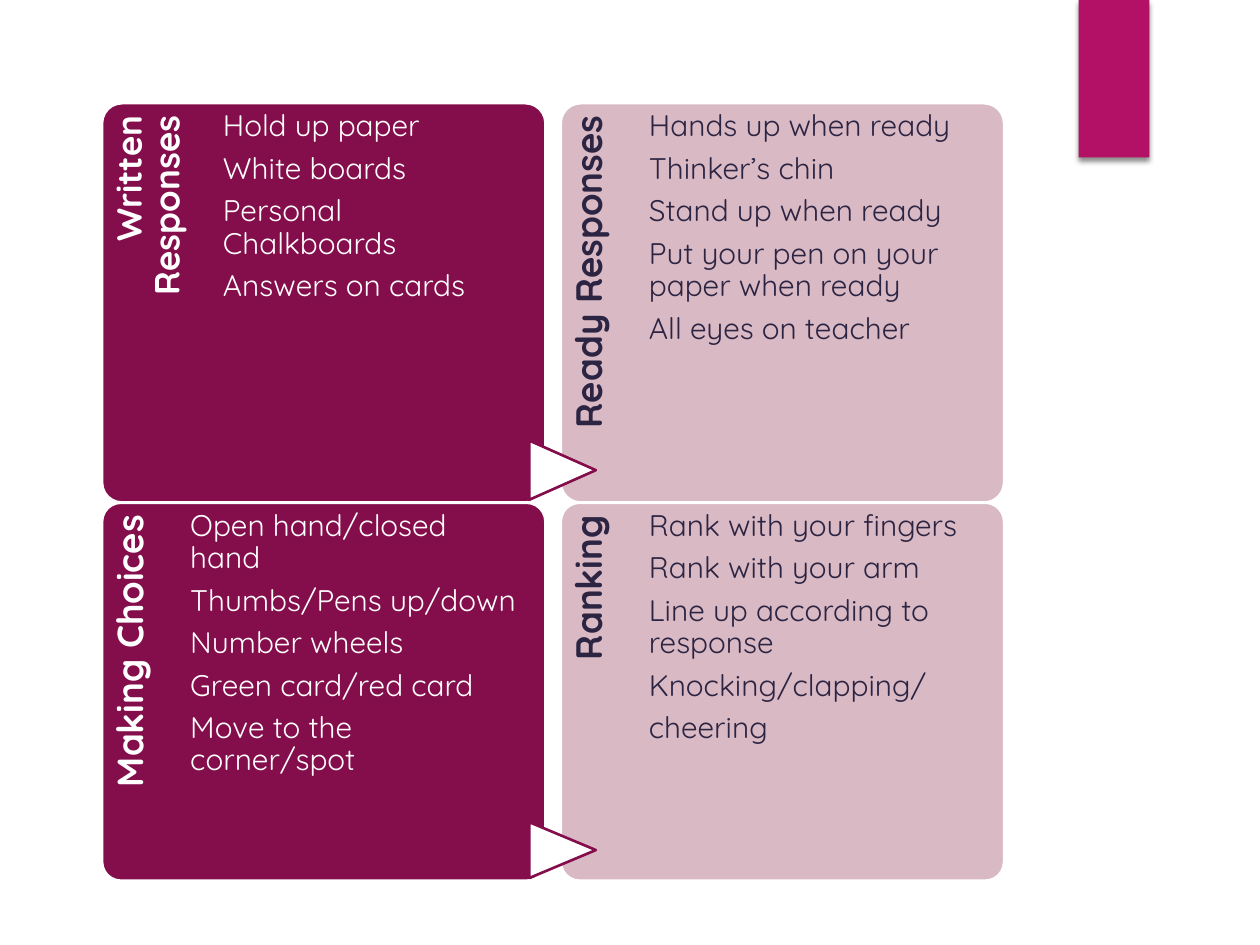
from lxml import etree
from pptx import Presentation
from pptx.dml.color import RGBColor
from pptx.enum.shapes import MSO_SHAPE as Shape
from pptx.enum.text import MSO_ANCHOR as Anchor, PP_ALIGN as Align
from pptx.oxml import parse_xml
from pptx.oxml.ns import nsdecls, qn
from pptx.util import Pt

PLUM, ROSE, NAVY, WHITE, MAGENTA = "840D4B", "D9B9C3", "2C2443", "FFFFFF", "B31166"
CARD_LEFT, CARD_WIDTH, CARD_STEP = 58.3, 253.4, 262.1
TITLE_WIDTH, BODY_WIDTH = 50.4, 188.6
ARROW_LENGTH, ARROW_LEFT = 38, 302.5

# Each row: top, height, arrow height, then (title, title size, indent, items) per card
ROWS = [
    (59, 228.2, 33.8, [
        ("Written Responses", 20, 18.7,
         ["Hold up paper", "White boards", "Personal Chalkboards", "Answers on cards"]),
        ("Ready Responses", 21, 0,
         ["Hands up when ready", "Thinker’s chin", "Stand up when ready",
          "Put your pen on your paper when ready", "All eyes on teacher"]),
    ]),
    (287.3, 216, 31.9, [
        ("Making Choices", 21, 0,
         ["Open hand/closed hand", "Thumbs/Pens up/down", "Number wheels",
          "Green card/red card", "Move to the corner/spot"]),
        ("Ranking", 21, 0,
         ["Rank with your fingers", "Rank with your arm", "Line up according to response",
          "Knocking/clapping/", "cheering"]),
    ]),
]


def rgb(value):
    return RGBColor.from_string(value)


def turned(left, top, width, height):
    """Box which, after a quarter turn, covers the given one."""
    shift = (width - height) / 2
    return left + shift, top - shift, height, width


def add_panel(slide, preset, box, fill, line=None):
    panel = slide.shapes.add_shape(preset, *map(Pt, box))
    panel.shadow.inherit = False
    panel.fill.solid()
    panel.fill.fore_color.rgb = rgb(fill)
    if line:
        panel.line.color.rgb = rgb(line)
        panel.line.width = Pt(1.5)
    else:
        panel.line.fill.background()
    return panel


def add_text(slide, box, lines, size, color, bold=False, align=Align.LEFT,
             indent=0, top_inset=4.5, right_inset=0, rotation=0):
    holder = slide.shapes.add_textbox(*map(Pt, box))
    holder.rotation = rotation
    frame = holder.text_frame
    frame.word_wrap = True
    frame.vertical_anchor = Anchor.TOP
    frame.margin_left = frame.margin_bottom = 0
    frame.margin_top, frame.margin_right = Pt(top_inset), Pt(right_inset)
    for index, line in enumerate(lines):
        para = frame.paragraphs[0] if index == 0 else frame.add_paragraph()
        if indent:
            props = para._p.get_or_add_pPr()
            props.set("marL", str(Pt(indent)))
            props.set("indent", "0")
        para.alignment = align
        para.line_spacing = 0.9
        para.space_after = Pt(size * 0.35)
        run = para.add_run()
        run.text = line
        run.font.name = "Quicksand"
        run.font.size = Pt(size)
        run.font.bold = bold
        run.font.color.rgb = rgb(color)


def add_accent(slide, box):
    accent = add_panel(slide, Shape.RECTANGLE, box, MAGENTA)
    effects = accent._element.spPr.find(qn("a:effectLst"))
    effects.append(parse_xml(
        f'<a:outerShdw {nsdecls("a")} blurRad="{Pt(3)}" dist="{Pt(2)}" dir="5400000" '
        'rotWithShape="0"><a:srgbClr val="000000"><a:alpha val="45000"/></a:srgbClr>'
        '</a:outerShdw>'))


def add_card(slide, box, title, title_size, fill, color):
    left, top, width, height = box
    card = add_panel(slide, Shape.ROUNDED_RECTANGLE, box, fill, WHITE)
    card.adjustments[0] = 0.05
    # Title reads upwards along the left edge
    add_text(slide, turned(left, top, TITLE_WIDTH, height * 0.82), [title], title_size,
             color, bold=True, align=Align.RIGHT, top_inset=5.5, right_inset=7.2,
             rotation=270)


def add_row(slide, top, height, arrow_height, cards):
    boxes = [(CARD_LEFT + i * CARD_STEP, top, CARD_WIDTH, height) for i in range(2)]
    styles = [(PLUM, WHITE), (ROSE, NAVY)]
    for box, (title, size, _, _), (fill, color) in zip(boxes, cards, styles):
        add_card(slide, box, title, size, fill, color)
    # Arrow from the left card to the right one
    arrow_top = top + height - arrow_height - 1.6
    arrow = add_panel(slide, Shape.FLOWCHART_EXTRACT,
                      turned(ARROW_LEFT, arrow_top, ARROW_LENGTH, arrow_height), WHITE, PLUM)
    arrow.rotation = 90
    # Items lie above the arrow
    for box, (_, _, indent, items), (_, color) in zip(boxes, cards, styles):
        add_text(slide, (box[0] + TITLE_WIDTH, top, BODY_WIDTH, height), items, 17, color,
                 indent=indent)


def main():
    deck = Presentation()
    deck.slide_width, deck.slide_height = Pt(720), Pt(540)
    slide = deck.slides.add_slide(deck.slide_layouts[6])
    add_accent(slide, (616.3, 0, 40.5, 90))
    for row in ROWS:
        add_row(slide, *row)
    deck.save("out.pptx")


if __name__ == "__main__":
    main()
